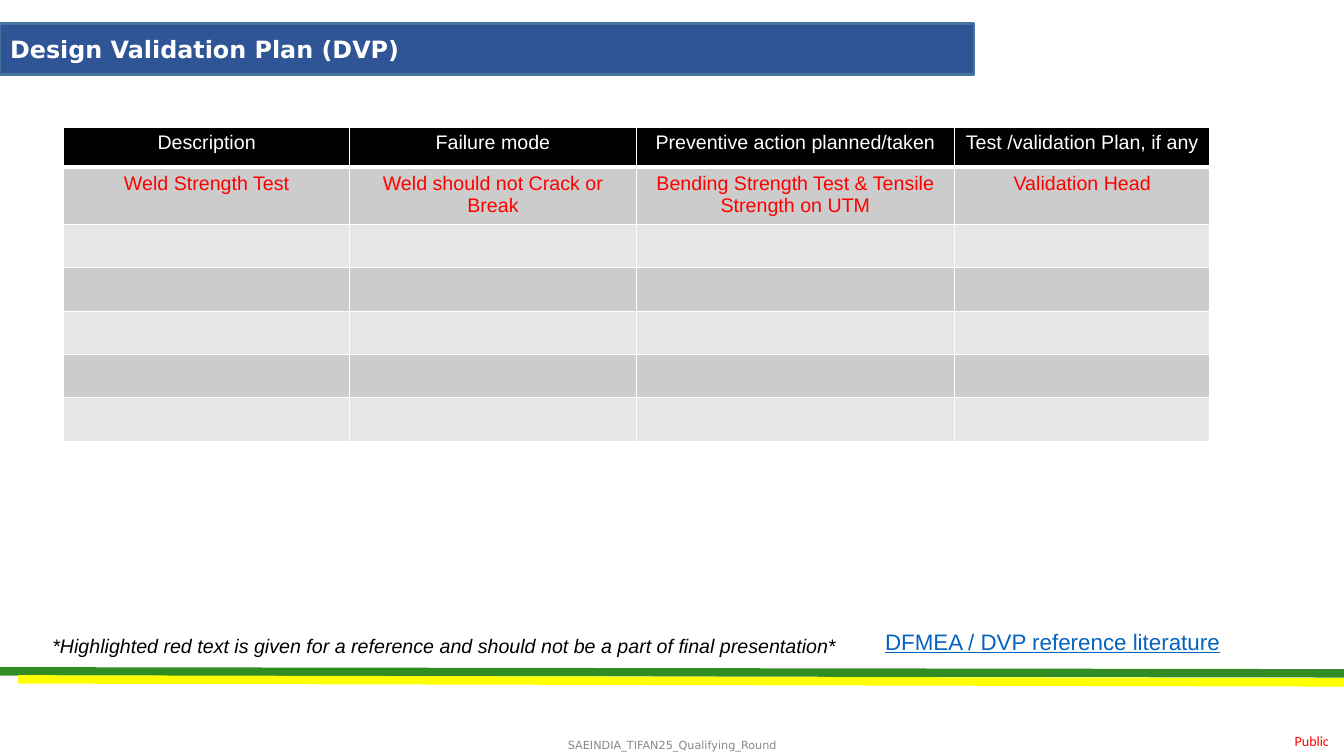
from lxml.etree import SubElement
from pptx import Presentation
from pptx.dml.color import RGBColor
from pptx.enum.shapes import MSO_CONNECTOR
from pptx.enum.text import MSO_ANCHOR, MSO_AUTO_SIZE, PP_ALIGN
from pptx.oxml.ns import qn
from pptx.util import Inches, Pt

COLORS = {
    "banner": "2F5597", "banner_edge": "43739E", "green": "318C23",
    "yellow": "FFFF00", "red": "FF0000", "link": "0563C1", "grey": "888888",
    "white": "FFFFFF", "black": "000000", "band_dark": "CCCCCC",
    "band_light": "E7E7E7",
}
HEADERS = ["Description", "Failure mode", "Preventive action planned/taken",
           "Test /validation Plan, if any"]
EXAMPLE = ["Weld Strength Test", "Weld should not Crack or Break",
           "Bending Strength Test & Tensile Strength on UTM", "Validation Head"]
COL_WIDTHS = [2.84, 2.84, 3.16, 2.53]
HEADER_HEIGHT, ROW_HEIGHT, BODY_ROWS = 0.4, 0.43, 6


def rgb(name):
    return RGBColor.from_string(COLORS[name])


def inches(box):
    return [Inches(v) for v in box]


def style(p, size, font, color, align=PP_ALIGN.LEFT):
    p.alignment = align
    p.font.size = Pt(size)
    p.font.name = font
    p.font.color.rgb = rgb(color)


def add_title(slide, box):
    sp = slide.shapes.title
    sp.left, sp.top, sp.width, sp.height = inches(box)
    sp.fill.solid()
    sp.fill.fore_color.rgb = rgb("banner")
    sp.line.color.rgb = rgb("banner_edge")
    sp.line.width = Pt(2)
    tf = sp.text_frame
    tf.text = "Design Validation Plan (DVP)"
    tf.auto_size = MSO_AUTO_SIZE.NONE
    tf.vertical_anchor = MSO_ANCHOR.MIDDLE
    p = tf.paragraphs[0]
    style(p, 17, "DejaVu Sans", "white")
    p.font.bold = True


def add_borders(cell, bottom):
    """Draw white cell edges; call before the fill so the XML order is valid."""
    tcPr = cell._tc.get_or_add_tcPr()
    for side, width in (("L", 1), ("R", 1), ("T", 1), ("B", bottom)):
        ln = SubElement(tcPr, qn(f"a:ln{side}"), w=str(Pt(width)))
        fill = SubElement(ln, qn("a:solidFill"))
        SubElement(fill, qn("a:srgbClr"), val=COLORS["white"])


def add_plan_table(slide, left, top):
    rows = [HEADERS, EXAMPLE] + [[""] * len(HEADERS)] * (BODY_ROWS - 1)
    height = HEADER_HEIGHT + BODY_ROWS * ROW_HEIGHT
    box = inches((left, top, sum(COL_WIDTHS), height))
    table = slide.shapes.add_table(len(rows), len(HEADERS), *box).table
    for column, width in zip(table.columns, COL_WIDTHS):
        column.width = Inches(width)
    for i, texts in enumerate(rows):
        header = i == 0
        table.rows[i].height = Inches(HEADER_HEIGHT if header else ROW_HEIGHT)
        band = "black" if header else "band_dark" if i % 2 else "band_light"
        for j, text in enumerate(texts):
            cell = table.cell(i, j)
            add_borders(cell, 3 if header else 1)
            cell.fill.solid()
            cell.fill.fore_color.rgb = rgb(band)
            cell.text = text
            p = cell.text_frame.paragraphs[0]
            style(p, 14, "Arial", "white" if header else "red", PP_ALIGN.CENTER)
            p.font.bold = False


def add_text(slide, box, text, size, font, color, align=PP_ALIGN.LEFT,
             anchor=MSO_ANCHOR.TOP):
    tf = slide.shapes.add_textbox(*inches(box)).text_frame
    tf.word_wrap = True
    tf.vertical_anchor = anchor
    tf.text = text
    p = tf.paragraphs[0]
    style(p, size, font, color, align)
    return tf, p


def add_notes_row(slide, left, top):
    _, p = add_text(slide, (left, top + 0.06, 8.12, 0.34),
                    "*Highlighted red text is given for a reference and should "
                    "not be a part of final presentation*",
                    14, "Arial", "black", PP_ALIGN.CENTER)
    p.font.italic = True
    _, p = add_text(slide, (left + 8.33, top, 3.68, 0.37),
                    "DFMEA / DVP reference literature", 16, "Arial", "link")
    p.font.underline = True


def add_stripe(slide, color, *ends):
    line = slide.shapes.add_connector(MSO_CONNECTOR.STRAIGHT, *inches(ends))
    line.line.color.rgb = rgb(color)
    line.line.width = Pt(6)
    SubElement(line._element.spPr, qn("a:effectLst"))


def add_footer(slide, width, top):
    add_stripe(slide, "green", 0, top, width, top + 0.02)
    add_stripe(slide, "yellow", 0.18, top + 0.08, width, top + 0.11)
    tf, _ = add_text(slide, (width - 0.63, top + 0.55, 0.64 - 0.16, 0.29),
                     "Public", 10, "Calibri", "red", PP_ALIGN.RIGHT,
                     MSO_ANCHOR.MIDDLE)
    tf.margin_left = tf.margin_right = tf.margin_top = tf.margin_bottom = 0
    add_text(slide, (4.42, top + 0.63, 4.5, 0.21),
             "SAEINDIA_TIFAN25_Qualifying_Round", 8, "DejaVu Sans", "grey",
             PP_ALIGN.CENTER, MSO_ANCHOR.MIDDLE)


def main():
    prs = Presentation()
    prs.slide_width, prs.slide_height = Inches(13.33), Inches(7.5)
    slide = prs.slides.add_slide(prs.slide_layouts[5])
    add_footer(slide, 13.33, 6.66)
    add_title(slide, (0, 0.23, 9.66, 0.51))
    add_plan_table(slide, 0.63, 1.26)
    add_notes_row(slide, 0.35, 6.18)
    prs.save("out.pptx")


if __name__ == "__main__":
    main()
